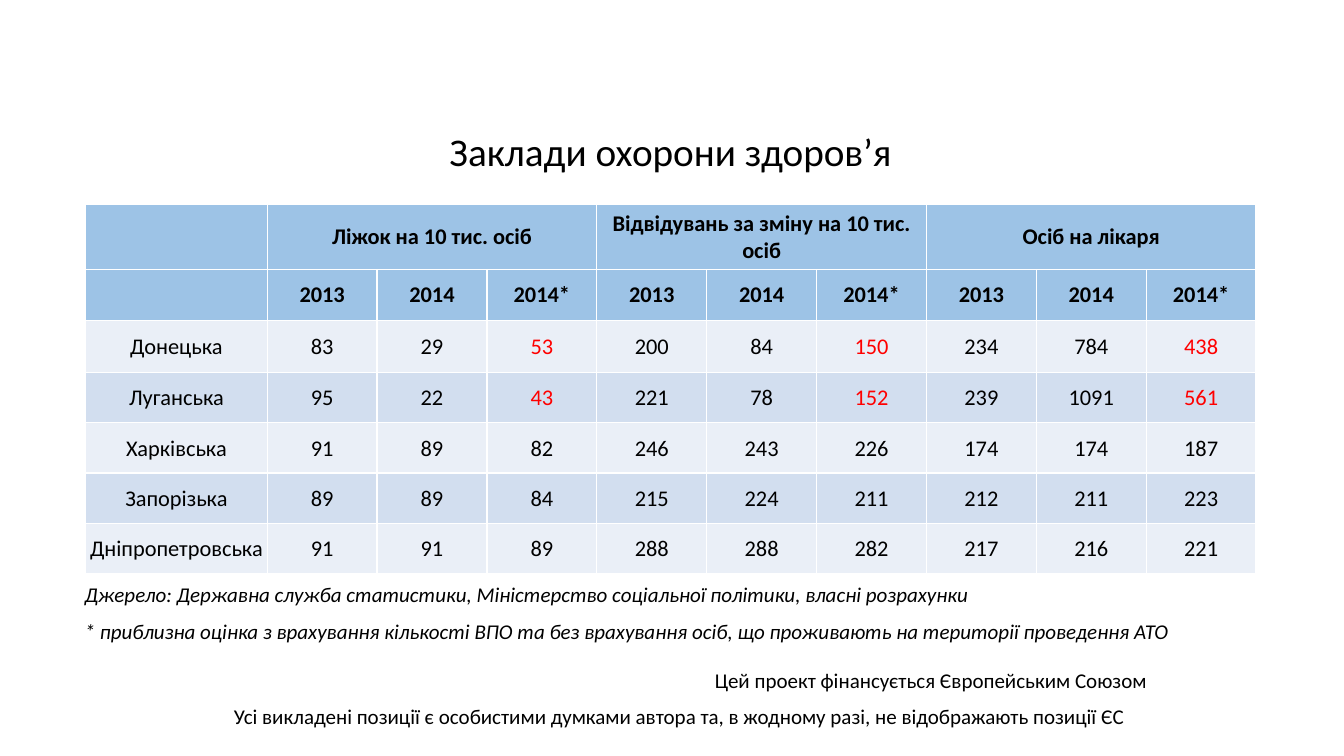
import pptx
import pptx.dml.color
import pptx.enum.text
import pptx.util

Inches = pptx.util.Inches
Pt = pptx.util.Pt
ALIGN = pptx.enum.text.PP_ALIGN
MIDDLE = pptx.enum.text.MSO_ANCHOR.MIDDLE

# Content
TITLE = "Заклади охорони здоров’я"
GROUPS = ["Ліжок на 10 тис. осіб", "Відвідувань за зміну на 10 тис. осіб", "Осіб на лікаря"]
YEARS = ["2013", "2014", "2014*"]
REGIONS = [
    ("Донецька", 83, 29, 53, 200, 84, 150, 234, 784, 438),
    ("Луганська", 95, 22, 43, 221, 78, 152, 239, 1091, 561),
    ("Харківська", 91, 89, 82, 246, 243, 226, 174, 174, 187),
    ("Запорізька", 89, 89, 84, 215, 224, 211, 212, 211, 223),
    ("Дніпропетровська", 91, 91, 89, 288, 288, 282, 217, 216, 221),
]
MARKED_REGIONS = ("Донецька", "Луганська")
# Text, left indent in inches, space before in points, italic
NOTES = [
    ("Джерело: Державна служба статистики, Міністерство соціальної політики, власні розрахунки", 0, 0, True),
    ("* приблизна оцінка з врахування кількості ВПО та без врахування осіб, "
     "що проживають на території проведення АТО", 0, 10, True),
    ("Цей проект фінансується Європейським Союзом", 6.25, 18.5, False),
    ("Усі викладені позиції є особистими думками автора та, в жодному разі, "
     "не відображають позиції ЄС", 1.48, 10, False),
]

# Style and layout
FONT = "Calibri"
BLACK, RED = "000000", "FF0000"
HEADER_FILL = "9DC3E6"
BAND_FILLS = ["EAEFF7", "D2DEEF"]
COLUMN_WIDTHS = [1.8] + [1.09] * 9
ROW_HEIGHTS = [0.64, 0.51, 0.51] + [0.5] * 4


def color(value):
    return pptx.dml.color.RGBColor.from_string(value)


def write(paragraph, text, size=16, fill=BLACK, bold=False, italic=False,
          align=ALIGN.CENTER, line_spacing=None, before=0):
    paragraph.alignment = align
    paragraph.space_before = Pt(before)
    if line_spacing:
        paragraph.line_spacing = line_spacing
    run = paragraph.add_run()
    run.text = text
    run.font.name = FONT
    run.font.size = Pt(size)
    run.font.bold = bold
    run.font.italic = italic
    run.font.color.rgb = color(fill)


def add_title(slide):
    title = slide.shapes.title
    title.left, title.top = Inches(0.75), Inches(1.29)
    title.width, title.height = Inches(11.8), Inches(0.5)
    title.text_frame.vertical_anchor = MIDDLE
    write(title.text_frame.paragraphs[0], TITLE, size=28, line_spacing=0.8)


def add_health_table(slide):
    frame = slide.shapes.add_table(
        len(ROW_HEIGHTS), len(COLUMN_WIDTHS), Inches(0.85), Inches(2.03),
        Inches(sum(COLUMN_WIDTHS)), Inches(sum(ROW_HEIGHTS)))
    table = frame.table
    for column, width in zip(table.columns, COLUMN_WIDTHS):
        column.width = Inches(width)
    for row, height in zip(table.rows, ROW_HEIGHTS):
        row.height = Inches(height)

    # Two header rows, then one row for each region
    group_row = [""]
    for group in GROUPS:
        group_row += [group, "", ""]
    rows = [group_row, [""] + YEARS * len(GROUPS)] + REGIONS

    for row_index, values in enumerate(rows):
        header = row_index < 2
        for column_index, value in enumerate(values):
            cell = table.cell(row_index, column_index)
            cell.vertical_anchor = MIDDLE
            cell.fill.solid()
            cell.fill.fore_color.rgb = color(HEADER_FILL if header else BAND_FILLS[row_index % 2])
            if not header:
                cell.margin_left = cell.margin_right = cell.margin_top = Inches(0.01)
                cell.margin_bottom = 0
            # Every third figure is the estimate for 2014
            estimate = column_index > 0 and column_index % 3 == 0
            marked = estimate and values[0] in MARKED_REGIONS
            if value != "":
                write(cell.text_frame.paragraphs[0], str(value),
                      fill=RED if marked else BLACK, bold=header)

    for start in range(1, len(COLUMN_WIDTHS), len(YEARS)):
        table.cell(0, start).merge(table.cell(0, start + len(YEARS) - 1))


def add_notes_below_table(slide):
    box = slide.shapes.add_textbox(Inches(0.84), Inches(5.8), Inches(11.7), Inches(1.5))
    frame = box.text_frame
    frame.word_wrap = True
    frame.margin_left = frame.margin_right = frame.margin_top = frame.margin_bottom = 0
    for index, (text, indent, before, italic) in enumerate(NOTES):
        paragraph = frame.add_paragraph() if index else frame.paragraphs[0]
        write(paragraph, text, size=15, italic=italic, align=ALIGN.LEFT,
              line_spacing=0.9, before=before)
        paragraph._p.get_or_add_pPr().set("marL", str(Inches(indent)))


def main():
    presentation = pptx.Presentation()
    presentation.slide_width = Inches(13.33)
    presentation.slide_height = Inches(7.5)
    slide = presentation.slides.add_slide(presentation.slide_layouts[5])
    add_title(slide)
    add_health_table(slide)
    add_notes_below_table(slide)
    presentation.save("out.pptx")


if __name__ == "__main__":
    main()
